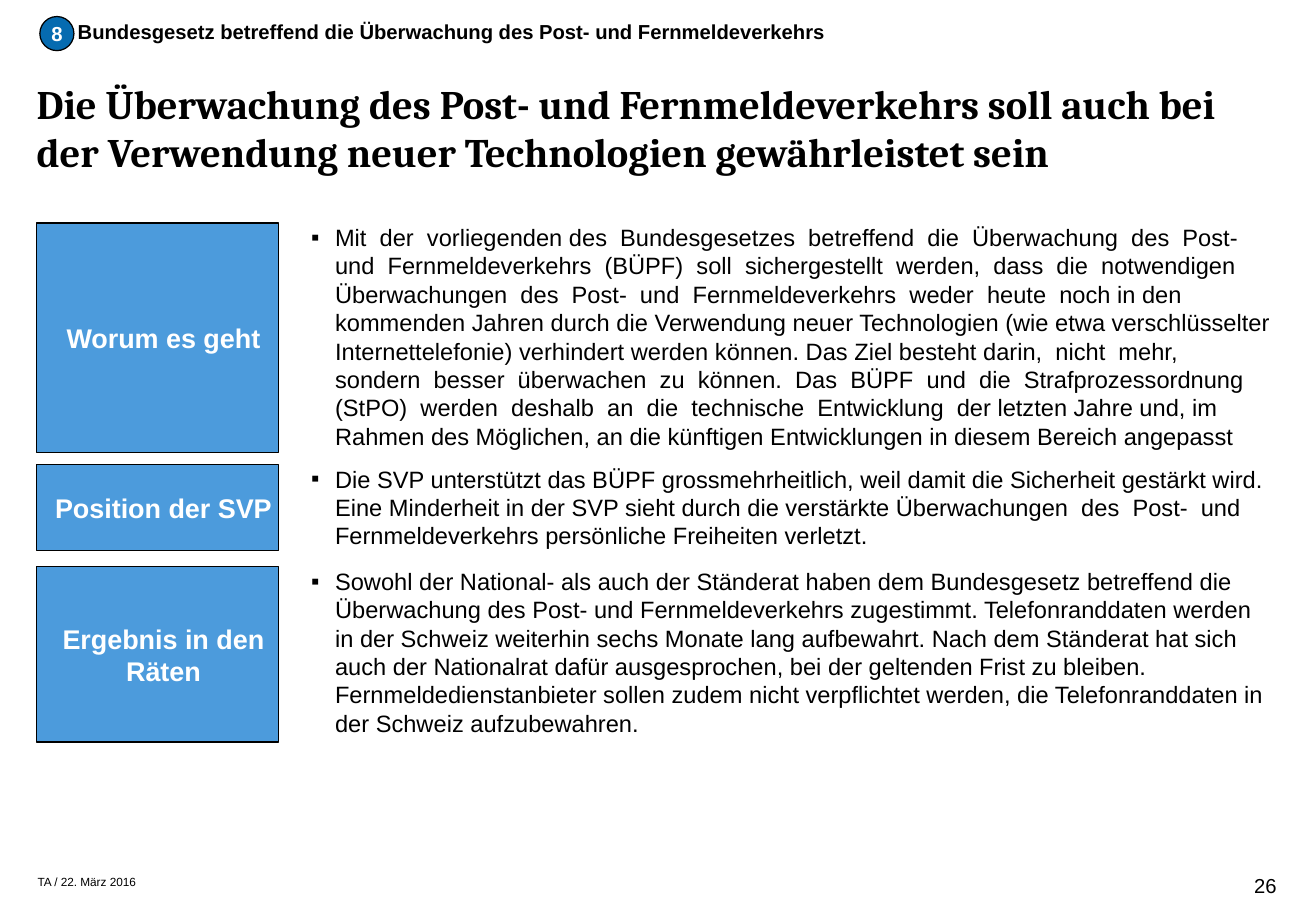
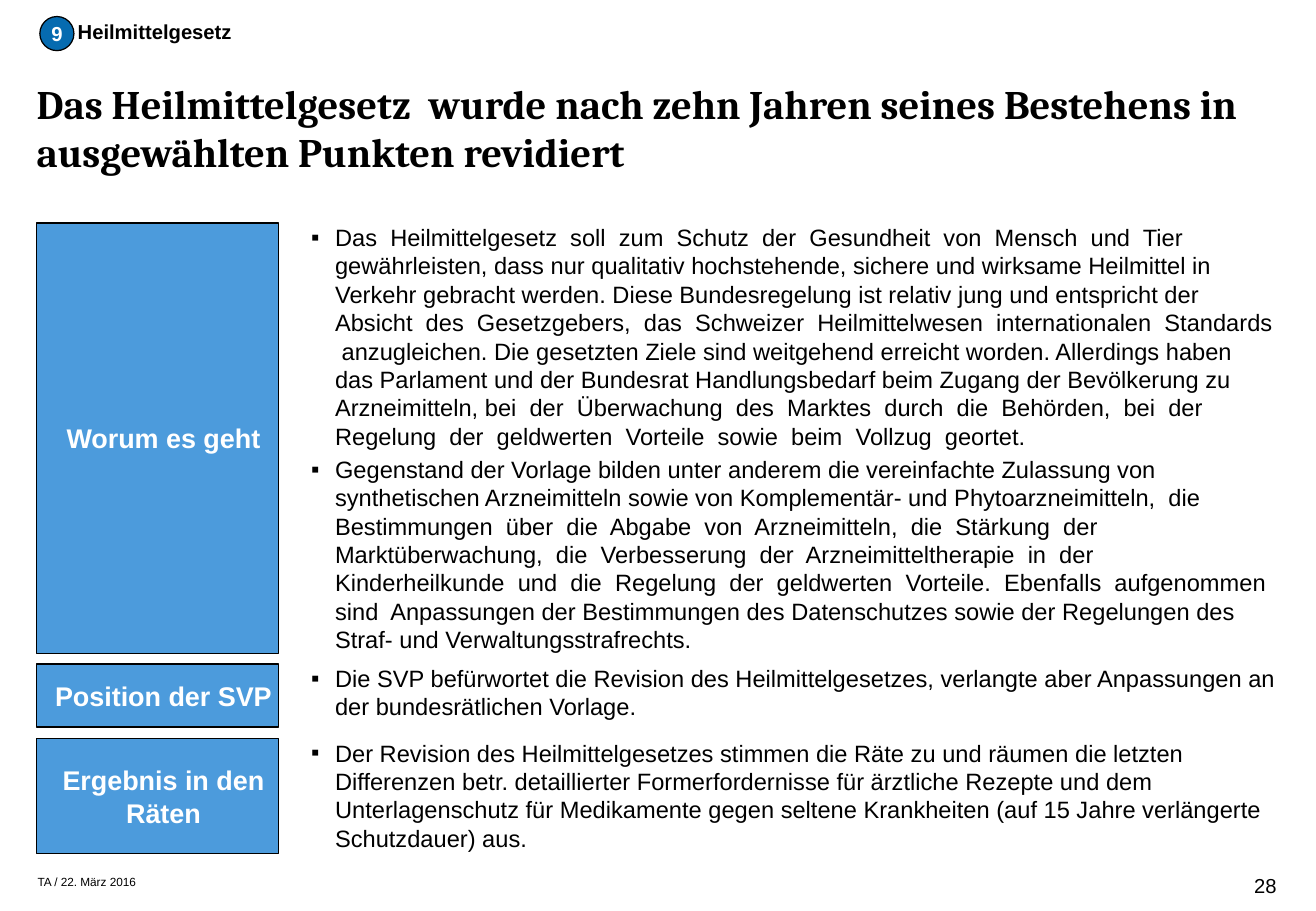
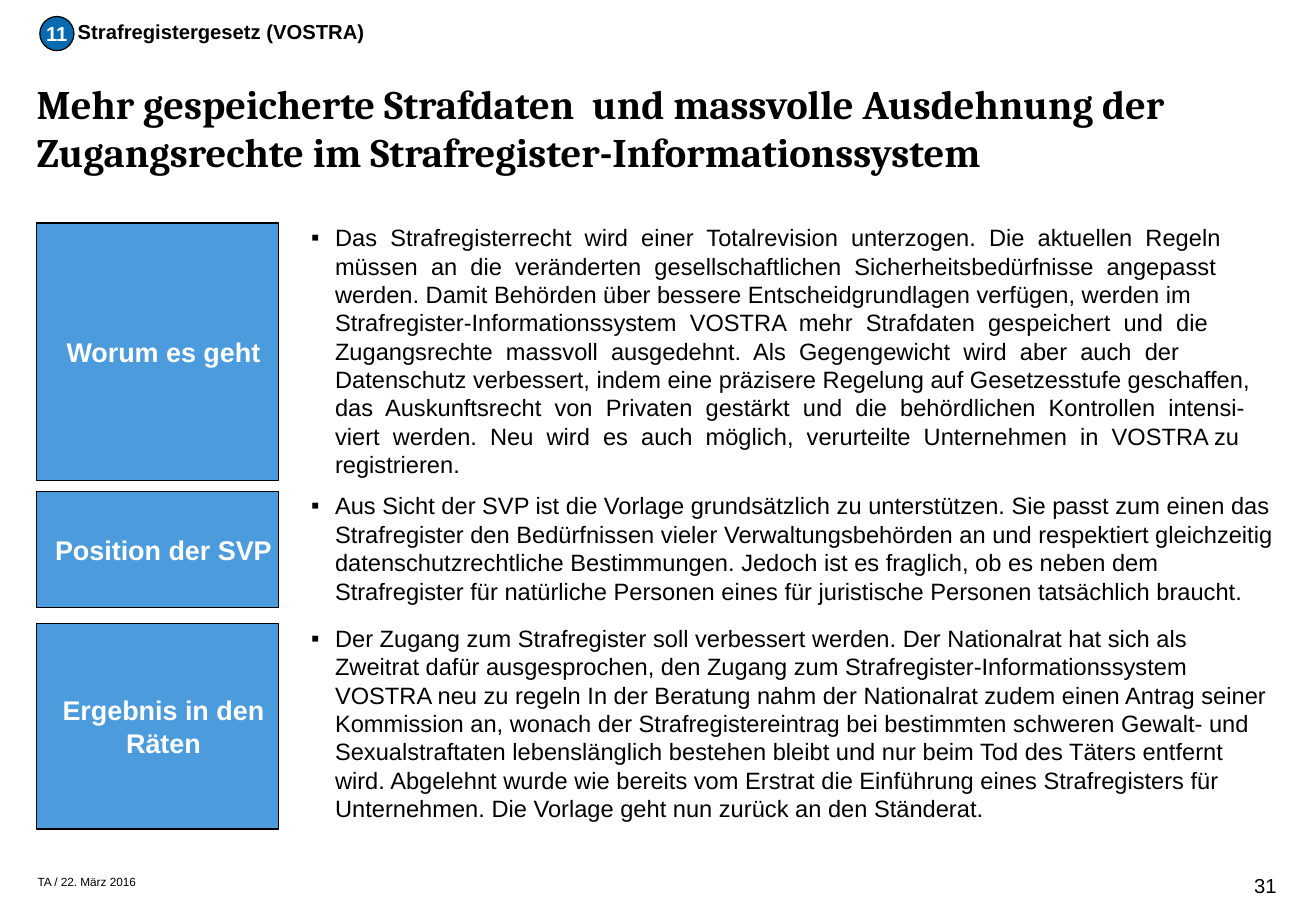
from pptx import Presentation
from pptx.util import Pt
from pptx.dml.color import RGBColor as Rgb
from pptx.enum.shapes import MSO_SHAPE as Kind
from pptx.enum.text import MSO_ANCHOR as Anchor, PP_ALIGN as Align
from pptx.oxml.ns import qn
from lxml.etree import SubElement as Sub

HUES = {"ink": "000000", "white": "FFFFFF", "box": "4C9BDC", "disc": "066BB0"}
LABELS = ["Worum es geht", "Position der SVP", "Ergebnis in den Räten"]
FOOT = "TA / 22. März 2016"
LEFT, TOP, WIDE = 21.7, 132.2, 143.3
BODY, SPAN = 184.4, 572.4
HANG = 14.2

PAGES = [
    {
        "num": "8",
        "page": "26",
        "topic": "Bundesgesetz betreffend die Überwachung des Post- und Fernmeldeverkehrs",
        "title": "Die Überwachung des Post- und Fernmeldeverkehrs soll auch bei der Verwendung neuer Technologien gewährleistet sein",
        "highs": [136, 51, 104],
        "gaps": [7.2, 9.5],
        "rows": [
            ["Mit  der  vorliegenden des  Bundesgesetzes  betreffend  die  Überwachung  des  Post-  und  Fernmeldeverkehrs  (BÜPF)  soll  sichergestellt  werden,  dass  die  notwendigen  Überwachungen  des  Post-  und  Fernmeldeverkehrs  weder  heute  noch in den kommenden Jahren durch die Verwendung neuer Technologien (wie etwa verschlüsselter Internettelefonie) verhindert werden können. Das Ziel besteht darin,  nicht  mehr,  sondern  besser  überwachen  zu  können.  Das  BÜPF  und  die  Strafprozessordnung  (StPO)  werden  deshalb  an  die  technische  Entwicklung  der letzten Jahre und, im Rahmen des Möglichen, an die künftigen Entwicklungen in diesem Bereich angepasst"],
            ["Die SVP unterstützt das BÜPF grossmehrheitlich, weil damit die Sicherheit gestärkt wird. Eine Minderheit in der SVP sieht durch die verstärkte Überwachungen  des  Post-  und  Fernmeldeverkehrs persönliche Freiheiten verletzt."],
            ["Sowohl der National- als auch der Ständerat haben dem Bundesgesetz betreffend die Überwachung des Post- und Fernmeldeverkehrs zugestimmt. Telefonranddaten werden in der Schweiz weiterhin sechs Monate lang aufbewahrt. Nach dem Ständerat hat sich auch der Nationalrat dafür ausgesprochen, bei der geltenden Frist zu bleiben. Fernmeldedienstanbieter sollen zudem nicht verpflichtet werden, die Telefonranddaten in der Schweiz aufzubewahren."],
        ],
    },
    {
        "num": "9",
        "page": "28",
        "topic": "Heilmittelgesetz",
        "title": "Das Heilmittelgesetz  wurde nach zehn Jahren seines Bestehens in ausgewählten Punkten revidiert",
        "highs": [255, 37.4, 68.4],
        "gaps": [6.4, 6.7],
        "rows": [
            [
                "Das  Heilmittelgesetz  soll  zum  Schutz  der  Gesundheit  von  Mensch  und  Tier  gewährleisten, dass nur qualitativ hochstehende, sichere und wirksame Heilmittel in Verkehr gebracht werden. Diese Bundesregelung ist relativ jung und entspricht der  Absicht  des  Gesetzgebers,  das  Schweizer  Heilmittelwesen  internationalen  Standards  anzugleichen. Die gesetzten Ziele sind weitgehend erreicht worden. Allerdings haben das Parlament und der Bundesrat Handlungsbedarf beim Zugang der Bevölkerung zu Arzneimitteln, bei  der  Überwachung  des  Marktes  durch  die  Behörden,  bei  der  Regelung  der  geldwerten  Vorteile  sowie  beim  Vollzug  geortet.",
                "Gegenstand der Vorlage bilden unter anderem die vereinfachte Zulassung von synthetischen Arzneimitteln sowie von Komplementär- und Phytoarzneimitteln,  die  Bestimmungen  über  die  Abgabe  von  Arzneimitteln,  die  Stärkung  der  Marktüberwachung,  die  Verbesserung  der  Arzneimitteltherapie  in  der  Kinderheilkunde  und  die  Regelung  der  geldwerten  Vorteile.  Ebenfalls  aufgenommen  sind  Anpassungen der Bestimmungen des Datenschutzes sowie der Regelungen des Straf- und Verwaltungsstrafrechts.",
            ],
            ["Die SVP befürwortet die Revision des Heilmittelgesetzes, verlangte aber Anpassungen an der bundesrätlichen Vorlage."],
            ["Der Revision des Heilmittelgesetzes stimmen die Räte zu und räumen die letzten Differenzen betr. detaillierter Formerfordernisse für ärztliche Rezepte und dem Unterlagenschutz für Medikamente gegen seltene Krankheiten (auf 15 Jahre verlängerte Schutzdauer) aus."],
        ],
    },
    {
        "num": "11",
        "page": "31",
        "topic": "Strafregistergesetz (VOSTRA)",
        "title": "Mehr gespeicherte Strafdaten  und massvolle Ausdehnung der Zugangsrechte im Strafregister-Informationssystem",
        "highs": [152.6, 69, 121.7],
        "gaps": [6.5, 9.4],
        "rows": [
            ["Das  Strafregisterrecht  wird  einer  Totalrevision  unterzogen.  Die  aktuellen  Regeln müssen  an  die  veränderten  gesellschaftlichen  Sicherheitsbedürfnisse  angepasst  werden. Damit Behörden über bessere Entscheidgrundlagen verfügen, werden im Strafregister-Informationssystem  VOSTRA  mehr  Strafdaten  gespeichert  und  die  Zugangsrechte  massvoll  ausgedehnt.  Als  Gegengewicht  wird  aber  auch  der Datenschutz verbessert, indem eine präzisere Regelung auf Gesetzesstufe geschaffen,  das  Auskunftsrecht  von  Privaten  gestärkt  und  die  behördlichen  Kontrollen  intensi-viert  werden.  Neu  wird  es  auch  möglich,  verurteilte  Unternehmen  in  VOSTRA zu registrieren."],
            ["Aus Sicht der SVP ist die Vorlage grundsätzlich zu unterstützen. Sie passt zum einen das Strafregister den Bedürfnissen vieler Verwaltungsbehörden an und respektiert gleichzeitig datenschutzrechtliche Bestimmungen. Jedoch ist es fraglich, ob es neben dem Strafregister für natürliche Personen eines für juristische Personen tatsächlich braucht."],
            ["Der Zugang zum Strafregister soll verbessert werden. Der Nationalrat hat sich als Zweitrat dafür ausgesprochen, den Zugang zum Strafregister-Informationssystem VOSTRA neu zu regeln In der Beratung nahm der Nationalrat zudem einen Antrag seiner Kommission an, wonach der Strafregistereintrag bei bestimmten schweren Gewalt- und Sexualstraftaten lebenslänglich bestehen bleibt und nur beim Tod des Täters entfernt wird. Abgelehnt wurde wie bereits vom Erstrat die Einführung eines Strafregisters für Unternehmen. Die Vorlage geht nun zurück an den Ständerat."],
        ],
    },
]


def hue(name):
    return Rgb.from_string(HUES[name])


def write(shape, lines, size=14, font="Arial", ink="ink", bold=False, align=Align.LEFT,
          anchor=Anchor.TOP, inset=0, wrap=True, bullet=False):
    frame = shape.text_frame
    frame.word_wrap = wrap
    frame.vertical_anchor = anchor
    frame.margin_left = Pt(inset)
    frame.margin_top = frame.margin_right = frame.margin_bottom = 0
    for i, line in enumerate(lines):
        para = frame.add_paragraph() if i else frame.paragraphs[0]
        para.alignment = align
        if i:
            para.space_before = Pt(3)
        if bullet:
            props = para._p.get_or_add_pPr()
            props.set("marL", str(Pt(HANG)))
            props.set("indent", str(-Pt(HANG)))
            Sub(props, qn("a:buFont")).set("typeface", font)
            Sub(props, qn("a:buChar")).set("char", "▪")
        run = para.add_run()
        run.text = line
        run.font.size = Pt(size)
        run.font.name = font
        run.font.bold = bold
        run.font.color.rgb = hue(ink)


def text(slide, spot, lines, **look):
    write(slide.shapes.add_textbox(*map(Pt, spot)), lines, **look)


def block(slide, kind, spot, fill, line, **look):
    shape = slide.shapes.add_shape(kind, *map(Pt, spot))
    shape.shadow.inherit = False
    shape.fill.solid()
    shape.fill.fore_color.rgb = hue(fill)
    shape.line.color.rgb = hue("ink")
    shape.line.width = Pt(0.75)
    write(shape, [line], ink="white", bold=True, align=Align.CENTER,
          anchor=Anchor.MIDDLE, **look)


def build(deck, page):
    slide = deck.slides.add_slide(deck.slide_layouts[6])
    text(slide, (22.3, 518.4, 60.5, 8.6), [FOOT], size=7, wrap=False)
    text(slide, (LEFT, 46.6, 735.1, 56.2), [page["title"]], size=24, font="Cambria", bold=True)
    text(slide, (714.2, 517.7, 42.5, 14.4), [page["page"]], size=12, align=Align.RIGHT)
    top = TOP
    for label, lines, high, gap in zip(LABELS, page["rows"], page["highs"], page["gaps"] + [0]):
        text(slide, (BODY, top, SPAN, high), lines, bullet=True)
        block(slide, Kind.RECTANGLE, (LEFT, top, WIDE, high), "box", label,
              size=16, inset=7.2)
        top += high + gap
    text(slide, (46.1, 11.5, 448, 14.4), [page["topic"]], size=12, bold=True, wrap=False)
    block(slide, Kind.OVAL, (23.6, 9.8, 20.2, 20.2), "disc", page["num"], size=12, wrap=False)


def main():
    deck = Presentation()
    deck.slide_width, deck.slide_height = Pt(780), Pt(540)
    for page in PAGES:
        build(deck, page)
    deck.save("out.pptx")


if __name__ == "__main__":
    main()
